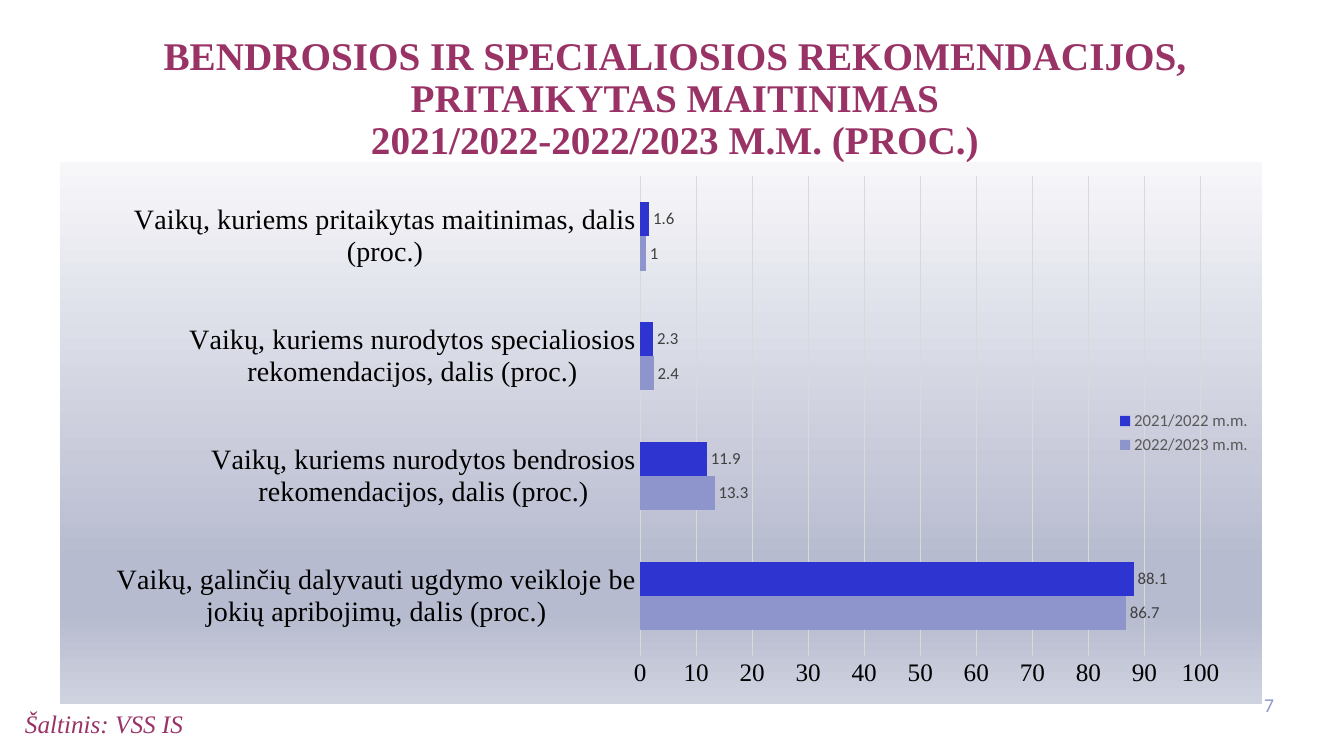
from copy import deepcopy
from dataclasses import dataclass

from lxml import etree
from pptx import Presentation
from pptx.chart.data import CategoryChartData
from pptx.dml.color import RGBColor
from pptx.enum.chart import XL_CHART_TYPE, XL_LABEL_POSITION, XL_LEGEND_POSITION, XL_TICK_MARK
from pptx.enum.text import MSO_ANCHOR, MSO_AUTO_SIZE, PP_ALIGN
from pptx.oxml import parse_xml
from pptx.oxml.ns import nsdecls, qn
from pptx.util import Cm, Pt

BAR = XL_CHART_TYPE.BAR_CLUSTERED
OUTSIDE = XL_LABEL_POSITION.OUTSIDE_END
LEGEND_RIGHT = XL_LEGEND_POSITION.RIGHT
NO_TICK = XL_TICK_MARK.NONE
TOP, MIDDLE = MSO_ANCHOR.TOP, MSO_ANCHOR.MIDDLE
NO_FIT = MSO_AUTO_SIZE.NONE
LEFT, CENTER, RIGHT = PP_ALIGN.LEFT, PP_ALIGN.CENTER, PP_ALIGN.RIGHT

PLUM = RGBColor(0x99, 0x33, 0x66)
LAVENDER = RGBColor(0x8E, 0x96, 0xCD)
BAR_LIGHT = RGBColor(0x8D, 0x95, 0xCC)
BAR_DARK = RGBColor(0x2E, 0x34, 0xD0)
BLACK = RGBColor(0, 0, 0)
LABEL_GREY = RGBColor(0x40, 0x40, 0x40)
LEGEND_GREY = RGBColor(0x59, 0x59, 0x59)
GRID_GREY = RGBColor(0xD9, 0xD9, 0xD9)
SERIF, SANS = "Times New Roman", "Calibri"

BACKDROP = ((0, "F7F7FA"), (74, "B7BBCF"), (83, "B7BBCF"), (100, "CFD2DF"))
PLOT_LAYOUT = {"x": 0.483, "y": 0.026, "w": 0.466, "h": 0.886}
CATEGORIES = (
    "Vaikų, galinčių dalyvauti ugdymo veikloje be jokių apribojimų, dalis (proc.)",
    "Vaikų, kuriems nurodytos bendrosios rekomendacijos, dalis (proc.)",
    "Vaikų, kuriems nurodytos specialiosios rekomendacijos, dalis (proc.)",
    "Vaikų, kuriems pritaikytas maitinimas, dalis (proc.)",
)


@dataclass(frozen=True)
class Box:
    left: float
    top: float
    width: float
    height: float

    def emu(self) -> tuple:
        return Cm(self.left), Cm(self.top), Cm(self.width), Cm(self.height)


@dataclass(frozen=True)
class Label:
    text: str
    box: Box
    font: dict
    align: PP_ALIGN
    anchor: MSO_ANCHOR
    spacing: float = 1.0


@dataclass(frozen=True)
class Year:
    name: str
    values: tuple
    color: RGBColor


TITLE = Label(
    "BENDROSIOS IR SPECIALIOSIOS REKOMENDACIJOS,\nPRITAIKYTAS MAITINIMAS\n"
    "2021/2022-2022/2023 M.M. (PROC.)",
    Box(0.38, 0.79, 33.25, 3.96),
    {"name": SERIF, "size": Pt(28), "bold": True, "color": PLUM}, CENTER, TOP, 0.9)
LABELS = (
    Label("Šaltinis: VSS IS", Box(0.38, 17.73, 16, 0.97),
          {"name": SERIF, "size": Pt(18), "italic": True, "color": PLUM}, LEFT, TOP),
    Label("7", Box(31.04, 17.25, 1.32, 1.02),
          {"name": SANS, "size": Pt(14), "color": LAVENDER}, RIGHT, MIDDLE),
)
YEARS = (
    Year("2022/2023 m.m.", (86.7, 13.3, 2.4, 1), BAR_LIGHT),
    Year("2021/2022 m.m.", (88.1, 11.9, 2.3, 1.6), BAR_DARK),
)
CHART_BOX = Box(1.5, 4.09, 30.3, 13.64)


def set_font(font, values: dict) -> None:
    for key, value in values.items():
        if key == "color":
            font.color.rgb = value
        else:
            setattr(font, key, value)


def fill_label(sp, label: Label) -> None:
    sp.left, sp.top, sp.width, sp.height = label.box.emu()
    tf = sp.text_frame
    tf.word_wrap = True
    tf.auto_size = NO_FIT
    tf.vertical_anchor = label.anchor
    p = tf.paragraphs[0]
    p.text = label.text
    p.alignment = label.align
    p.line_spacing = label.spacing
    for r in p.runs:
        set_font(r.font, label.font)
    for br in p._p.findall(qn("a:br")):
        br.insert(0, deepcopy(p.runs[0]._r.rPr))


def paint_backdrop(chart) -> None:
    stops = "".join(
        f'<a:gs pos="{pos * 1000}"><a:srgbClr val="{color}"/></a:gs>'
        for pos, color in BACKDROP)
    chart._chartSpace.find(qn("c:chart")).addnext(parse_xml(
        f'<c:spPr {nsdecls("c", "a")}><a:gradFill><a:gsLst>{stops}</a:gsLst>'
        '<a:lin ang="5400000" scaled="0"/></a:gradFill>'
        '<a:ln><a:noFill/></a:ln></c:spPr>'))


def place_plot(chart) -> None:
    area = chart._chartSpace.find(qn("c:chart")).find(qn("c:plotArea"))
    for old in area.findall(qn("c:layout")):
        area.remove(old)
    layout = etree.Element(qn("c:layout"))
    manual = etree.SubElement(layout, qn("c:manualLayout"))
    settings = {"layoutTarget": "inner", "xMode": "edge", "yMode": "edge", **PLOT_LAYOUT}
    for tag, value in settings.items():
        etree.SubElement(manual, qn(f"c:{tag}")).set("val", str(value))
    area.insert(0, layout)


def add_rates_chart(s) -> None:
    data = CategoryChartData()
    data.categories = CATEGORIES
    for year in YEARS:
        data.add_series(year.name, year.values)
    chart = s.shapes.add_chart(BAR, *CHART_BOX.emu(), data).chart
    chart.has_title = False
    set_font(chart.font, {"name": SANS, "size": Pt(10), "color": BLACK})
    paint_backdrop(chart)
    place_plot(chart)

    plot = chart.plots[0]
    plot.gap_width = 150
    plot.overlap = 0
    plot.vary_by_categories = False
    for series, year in zip(plot.series, YEARS):
        series.format.fill.solid()
        series.format.fill.fore_color.rgb = year.color
        labels = series.data_labels
        labels.show_value = True
        labels.position = OUTSIDE
        set_font(labels.font, {"name": SANS, "size": Pt(12), "color": LABEL_GREY})

    for axis, size in ((chart.category_axis, 20), (chart.value_axis, 18)):
        axis.major_tick_mark = axis.minor_tick_mark = NO_TICK
        axis.format.line.fill.background()
        set_font(axis.tick_labels.font, {"name": SERIF, "size": Pt(size), "color": BLACK})
    axis = chart.value_axis
    axis.minimum_scale, axis.maximum_scale, axis.major_unit = 0, 100, 10
    axis.has_major_gridlines = True
    grid = axis.major_gridlines.format.line
    grid.color.rgb = GRID_GREY
    grid.width = Pt(0.75)

    chart.has_legend = True
    chart.legend.position = LEGEND_RIGHT
    chart.legend.include_in_layout = False
    set_font(chart.legend.font, {"name": SANS, "size": Pt(12), "color": LEGEND_GREY})


def main() -> None:
    prs = Presentation()
    prs.slide_width, prs.slide_height = Cm(33.87), Cm(19.05)
    s = prs.slides.add_slide(prs.slide_layouts[5])
    fill_label(s.shapes.title, TITLE)
    for label in LABELS:
        fill_label(s.shapes.add_textbox(*label.box.emu()), label)
    add_rates_chart(s)
    prs.save("out.pptx")


if __name__ == "__main__":
    main()
